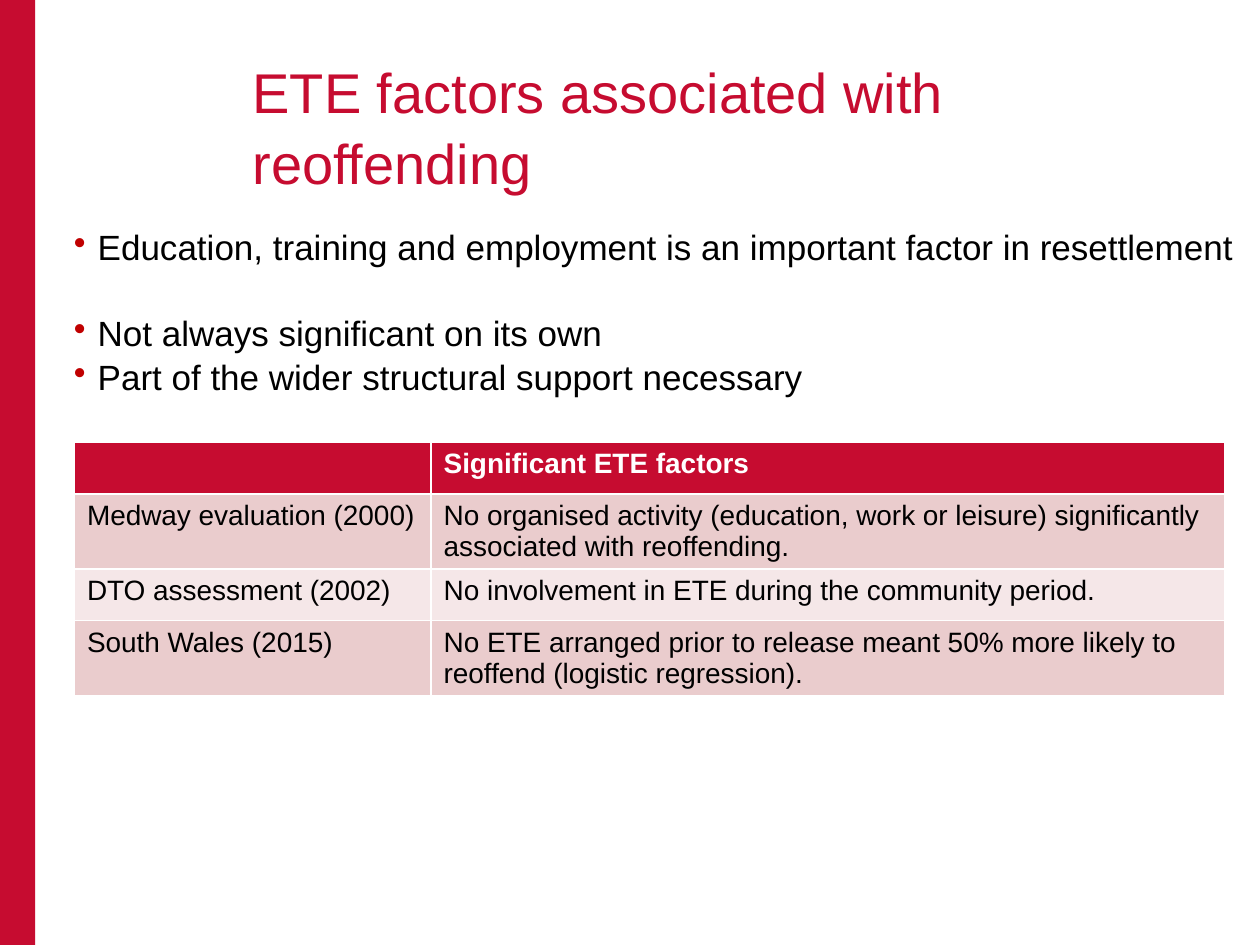
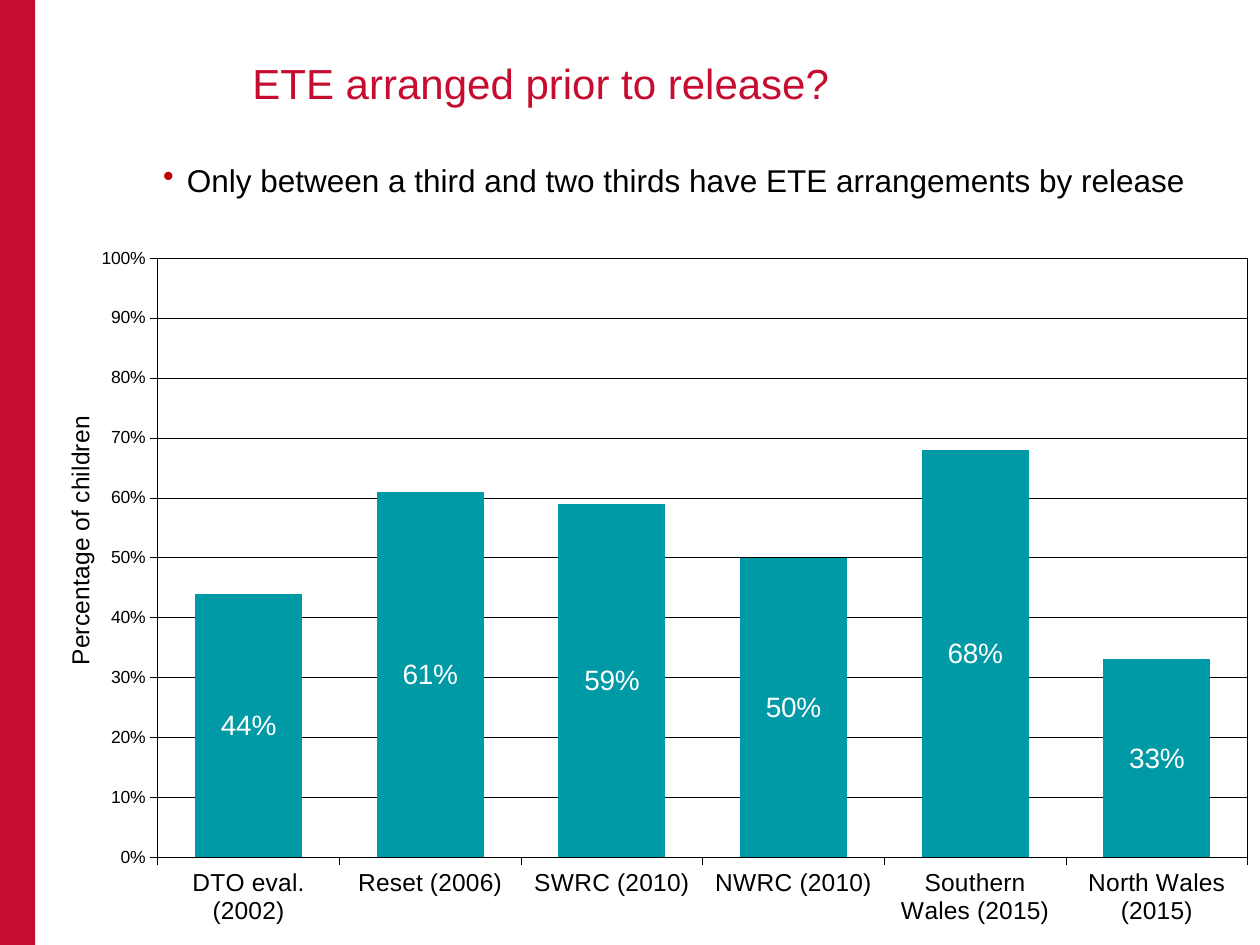
import pptx
import pptx.chart.data
import pptx.dml.color
import pptx.enum.chart
import pptx.enum.shapes
import pptx.enum.text
import pptx.oxml
import pptx.oxml.ns
import pptx.util
from lxml import etree

Cm = pptx.util.Cm
Pt = pptx.util.Pt
RGBColor = pptx.dml.color.RGBColor

RED = RGBColor(0xC6, 0x0C, 0x30)
DOT = RGBColor(0xC0, 0x00, 0x00)
TEAL = RGBColor(0x00, 0x9A, 0xA6)
ROSE = RGBColor(0xEA, 0xCC, 0xCD)
PALE = RGBColor(0xF5, 0xE7, 0xE8)
BLACK = RGBColor(0, 0, 0)
WHITE = RGBColor(255, 255, 255)

FACE = "Arial"
WIDE, HIGH = Cm(25.4), Cm(19.05)
INSET = Cm(0.19)
LEADING = 1.05
HAIR = Pt(0.25)

FACTORS = [
    ("", "Significant ETE factors"),
    ("Medway evaluation (2000)",
     "No organised activity (education, work or leisure) significantly "
     "associated with reoffending."),
    ("DTO assessment (2002)",
     "No involvement in ETE during the community period."),
    ("South Wales (2015)",
     "No ETE arranged prior to release meant 50% more likely to reoffend "
     "(logistic regression)."),
]
RATES = {
    "DTO eval. (2002)": 0.44,
    "Reset (2006)": 0.61,
    "SWRC (2010)": 0.59,
    "NWRC (2010)": 0.5,
    "Southern Wales (2015)": 0.68,
    "North Wales (2015)": 0.33,
}


def style(font, size, color=BLACK, bold=False):
    font.name = FACE
    font.size = Pt(size)
    font.bold = bold
    font.color.rgb = color


def paint(shape, color):
    shape.fill.solid()
    shape.fill.fore_color.rgb = color


def rule(line):
    line.color.rgb = BLACK
    line.width = HAIR


def setup(frame):
    """Give a text frame the shared wrap, insets and top anchor."""
    frame.word_wrap = True
    frame.auto_size = pptx.enum.text.MSO_AUTO_SIZE.NONE
    frame.vertical_anchor = pptx.enum.text.MSO_ANCHOR.TOP
    frame.margin_left = frame.margin_right = INSET
    frame.margin_top = frame.margin_bottom = INSET


def add_page(deck, text, size):
    """Add a slide with the red side band and its title."""
    page = deck.slides.add_slide(deck.slide_layouts[5])
    band = page.shapes.add_shape(
        pptx.enum.shapes.MSO_SHAPE.RECTANGLE, 0, 0, Cm(0.71), HIGH)
    band.shadow.inherit = False
    paint(band, RED)
    band.line.fill.background()

    title = page.shapes.title
    title.left, title.top = Cm(4.9), Cm(0.91)
    title.width, title.height = Cm(19.41), Cm(2.79)
    setup(title.text_frame)
    title.text_frame.text = text
    para = title.text_frame.paragraphs[0]
    para.alignment = pptx.enum.text.PP_ALIGN.LEFT
    para.line_spacing = LEADING
    style(para.font, size, RED)
    return page


def add_dot(para):
    """Put a red bullet with a hanging indent on a paragraph."""
    props = para._p.get_or_add_pPr()
    hang = Cm(0.48)
    props.set("marL", str(hang))
    props.set("indent", str(-hang))
    tint = etree.SubElement(props, pptx.oxml.ns.qn("a:buClr"))
    etree.SubElement(tint, pptx.oxml.ns.qn("a:srgbClr"), val=str(DOT))
    etree.SubElement(props, pptx.oxml.ns.qn("a:buChar"), char="•")


def add_points(page, box, points, size):
    """Add a bulleted text box; points are (text, space before) pairs."""
    frame = page.shapes.add_textbox(*box).text_frame
    setup(frame)
    for index, (text, gap) in enumerate(points):
        para = frame.add_paragraph() if index else frame.paragraphs[0]
        para.text = text
        add_dot(para)
        para.line_spacing = LEADING
        if gap:
            para.space_before = Pt(gap)
        style(para.font, size)


def add_grid(page, left, top, rows, widths, heights):
    table = page.shapes.add_table(
        len(rows), len(widths), left, top, sum(widths), sum(heights)).table
    for column, width in zip(table.columns, widths):
        column.width = width
    for index, (row, texts) in enumerate(zip(table.rows, rows)):
        row.height = heights[index]
        head = index == 0
        fill = RED if head else (PALE, ROSE)[index % 2]
        for cell, text in zip(row.cells, texts):
            paint(cell, fill)
            cell.text = text
            style(cell.text_frame.paragraphs[0].font, 16,
                  WHITE if head else BLACK, head)


def place(owner, x, y, w=None, h=None):
    """Fix a chart part at fractions of the chart area."""
    c = pptx.oxml.ns.qn
    old = owner.find(c("c:layout"))
    if old is not None:
        owner.remove(old)
    layout = etree.Element(c("c:layout"))
    manual = etree.SubElement(layout, c("c:manualLayout"))
    parts = [("xMode", "edge"), ("yMode", "edge"), ("x", x), ("y", y)]
    if w:
        parts = [("layoutTarget", "inner")] + parts + [("w", w), ("h", h)]
    for name, value in parts:
        etree.SubElement(manual, c("c:" + name), val=str(value))
    text = owner.find(c("c:tx"))
    if text is None:
        owner.insert(0, layout)
    else:
        text.addnext(layout)


def frame_plot(area):
    """Give the plot area a white fill and a thin black outline."""
    area.append(pptx.oxml.parse_xml(
        f'<c:spPr {pptx.oxml.ns.nsdecls("c", "a")}>'
        f'<a:solidFill><a:srgbClr val="{WHITE}"/></a:solidFill>'
        f'<a:ln w="{HAIR}"><a:solidFill><a:srgbClr val="{BLACK}"/>'
        '</a:solidFill></a:ln></c:spPr>'))


def add_bars(page, box, rates):
    kinds = pptx.enum.chart
    data = pptx.chart.data.CategoryChartData(number_format="0%")
    data.categories = list(rates)
    data.add_series("Series 1", list(rates.values()))
    chart = page.shapes.add_chart(
        kinds.XL_CHART_TYPE.COLUMN_STACKED, *box, data).chart
    chart.has_legend = chart.has_title = False
    style(chart.font, 14)

    plot = chart.plots[0]
    plot.gap_width, plot.overlap = 70, 100
    plot.vary_by_categories = False
    paint(plot.series[0].format, TEAL)
    plot.has_data_labels = True
    labels = plot.data_labels
    labels.show_value = True
    labels.number_format, labels.number_format_is_linked = "0%", False
    labels.position = kinds.XL_LABEL_POSITION.CENTER
    style(labels.font, 16, WHITE)

    for axis, size in ((chart.category_axis, 14), (chart.value_axis, 10)):
        axis.major_tick_mark = kinds.XL_TICK_MARK.OUTSIDE
        axis.minor_tick_mark = kinds.XL_TICK_MARK.NONE
        style(axis.tick_labels.font, size)
        rule(axis.format.line)

    scale = chart.value_axis
    scale.minimum_scale, scale.maximum_scale = 0, 1
    scale.major_unit = 0.1
    scale.tick_labels.number_format = "0%"
    scale.tick_labels.number_format_is_linked = False
    scale.has_major_gridlines = True
    rule(scale.major_gridlines.format.line)
    title = scale.axis_title
    title.text_frame.text = "Percentage of children"
    style(title.text_frame.paragraphs[0].font, 14)
    place(title._element, 0.02, 0.27)

    area = chart._chartSpace.chart.plotArea
    place(area, 0.1, 0.06, 0.89, 0.82)
    frame_plot(area)


def main():
    deck = pptx.Presentation()
    deck.slide_width, deck.slide_height = WIDE, HIGH

    page = add_page(deck, "ETE factors associated with reoffending", 32)
    add_grid(page, Cm(1.5), Cm(8.92), FACTORS, (Cm(7.19), Cm(16)),
             (Cm(1.04), Cm(1.48), Cm(1.04), Cm(1.48)))
    add_points(page, (Cm(1.3), Cm(4.32), Cm(24.1), Cm(3.68)), [
        ("Education, training and employment is an important factor in "
         "resettlement", 0),
        ("Not always significant on its own", 24),
        ("Part of the wider structural support necessary", 0),
    ], 20)

    page = add_page(deck, "ETE arranged prior to release?", 24)
    add_bars(page, (Cm(0.71), Cm(4.32), Cm(24.69), Cm(14.73)), RATES)
    add_points(page, (Cm(3.1), Cm(3.02), Cm(21.21), Cm(1.12)), [
        ("Only between a third and two thirds have ETE arrangements by "
         "release", 0),
    ], 18)

    deck.save("out.pptx")


if __name__ == "__main__":
    main()
